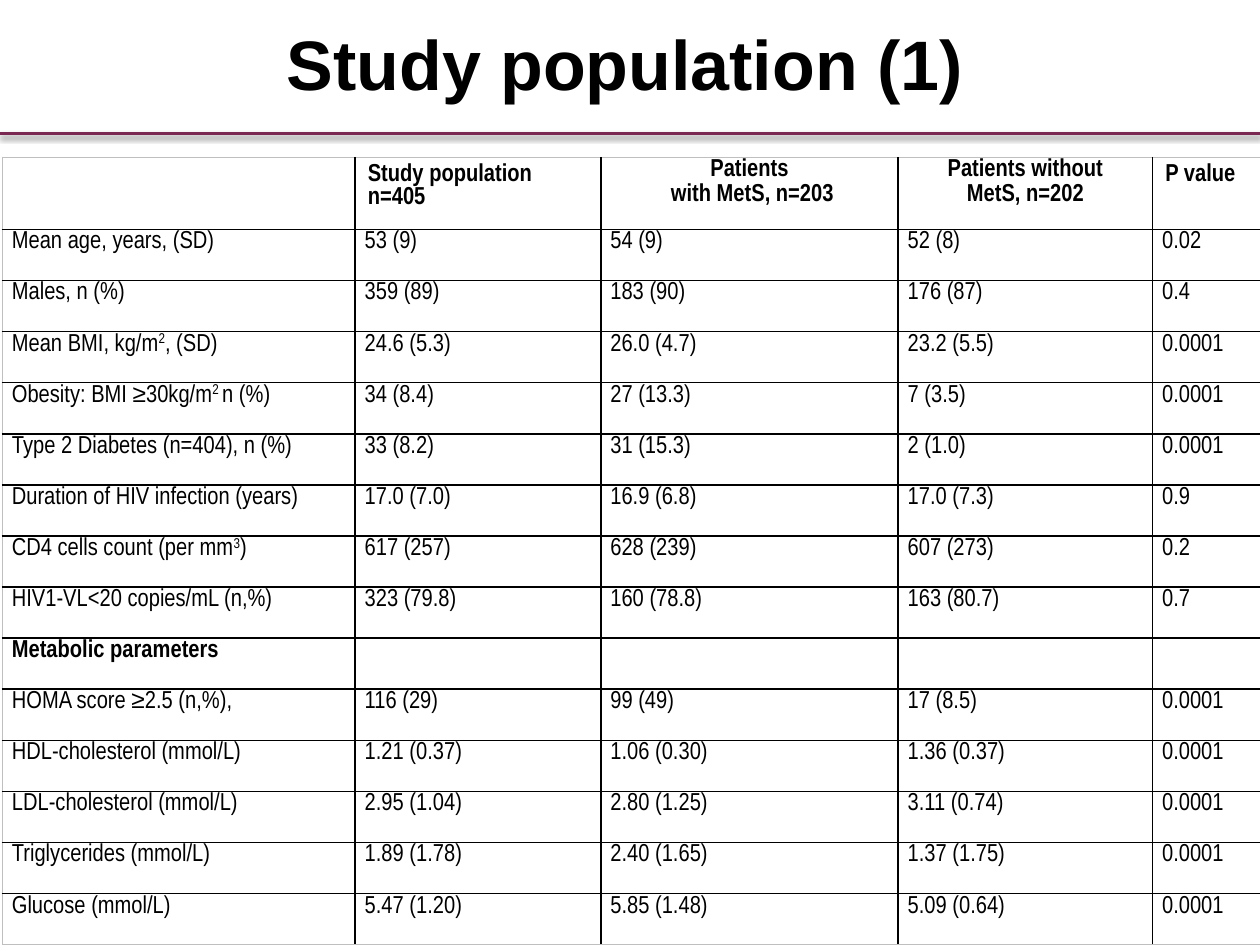
from lxml import etree
from pptx import Presentation
from pptx.dml.color import RGBColor
from pptx.enum import shapes, text
from pptx.oxml import ns
from pptx.util import Pt

BLACK = RGBColor(0x00, 0x00, 0x00)
WHITE = RGBColor(0xFF, 0xFF, 0xFF)
PLUM = RGBColor(0x7A, 0x28, 0x51)
EDGE_GREY = RGBColor(0xBF, 0xBF, 0xBF)

PAGE_WIDTH, PAGE_HEIGHT = 720, 540
COLUMN_WIDTHS = (201.6, 140.4, 169.9, 145.4, 62.6)
HEADER_HEIGHT, ROW_HEIGHT = 41.1, 29.2
LINE_SPACING = 1.07

# Superscripts stand between carets; a line break starts a new paragraph
HEADER = ("", "Study population\nn=405", "Patients\n with MetS, n=203",
          "Patients without\nMetS, n=202", "P value")
CENTRED_COLUMNS = (2, 3)
SECTION = "Metabolic parameters"
ROWS = (
    ("Mean age, years, (SD)", "53 (9)", "54 (9)", "52 (8)", "0.02"),
    ("Males, n (%)", "359 (89)", "183 (90)", "176 (87)", "0.4"),
    ("Mean BMI, kg/m^2^, (SD)", "24.6 (5.3)", "26.0 (4.7)", "23.2 (5.5)", "0.0001"),
    ("Obesity: BMI ≥30kg/m^2 ^n (%)", "34 (8.4)", "27 (13.3)", "7 (3.5)", "0.0001"),
    ("Type 2 Diabetes (n=404), n (%)", "33 (8.2)", "31 (15.3)", "2 (1.0)", "0.0001"),
    ("Duration of HIV infection (years)", "17.0 (7.0)", "16.9 (6.8)", "17.0 (7.3)", "0.9"),
    ("CD4 cells count (per mm^3^)", "617 (257)", "628 (239)", "607 (273)", "0.2"),
    ("HIV1-VL<20 copies/mL (n,%)", "323 (79.8)", "160 (78.8)", "163 (80.7)", "0.7"),
    (SECTION, "", "", "", ""),
    ("HOMA score ≥2.5 (n,%),", "116 (29)", "99 (49)", "17 (8.5)", "0.0001"),
    ("HDL-cholesterol (mmol/L)", "1.21 (0.37)", "1.06 (0.30)", "1.36 (0.37)", "0.0001"),
    ("LDL-cholesterol (mmol/L)", "2.95 (1.04)", "2.80 (1.25)", "3.11 (0.74)", "0.0001"),
    ("Triglycerides (mmol/L)", "1.89 (1.78)", "2.40 (1.65)", "1.37 (1.75)", "0.0001"),
    ("Glucose (mmol/L)", "5.47 (1.20)", "5.85 (1.48)", "5.09 (0.64)", "0.0001"),
)


def add_element(parent, tag, **attributes):
    element = etree.SubElement(parent, ns.qn(tag))
    for name, value in attributes.items():
        element.set(name, str(value))
    return element


def style_font(font, name, size, bold):
    font.name, font.size, font.bold = name, Pt(size), bold
    font.color.rgb = BLACK


def place_title(page, left, top, width, height):
    title = page.shapes.title
    title.left, title.top, title.width, title.height = map(Pt, (left, top, width, height))
    frame = title.text_frame
    frame.text = "Study population (1)"
    frame.word_wrap = False
    frame.auto_size = text.MSO_AUTO_SIZE.SHAPE_TO_FIT_TEXT
    frame.vertical_anchor = text.MSO_ANCHOR.MIDDLE
    para = frame.paragraphs[0]
    para.alignment = text.PP_ALIGN.CENTER
    style_font(para.font, "Arial", 40, True)


def place_rule(page, left, top, width):
    rule = page.shapes.add_connector(
        shapes.MSO_CONNECTOR.STRAIGHT, Pt(left), Pt(top), Pt(left + width), Pt(top))
    rule.line.color.rgb = PLUM
    rule.line.width = Pt(2)
    # Soft shadow straight below the rule
    effects = add_element(rule._element.spPr, "a:effectLst")
    shadow = add_element(effects, "a:outerShdw", blurRad=Pt(3.1), dist=Pt(1.6),
                         dir=90 * 60000, rotWithShape=0)
    color = add_element(shadow, "a:srgbClr", val=BLACK)
    add_element(color, "a:alpha", val=38000)


def set_borders(cell, colors):
    properties = cell._tc.get_or_add_tcPr()
    for side, color in zip("LRTB", colors):
        line = add_element(properties, f"a:ln{side}", w=Pt(1))
        fill = add_element(line, "a:solidFill")
        add_element(fill, "a:srgbClr", val=color)


def write_cell(cell, content, bold, compact, centred):
    if compact:
        cell.margin_left = cell.margin_right = Pt(5.4)
        cell.margin_top = cell.margin_bottom = 0
    frame = cell.text_frame
    for index, line in enumerate(content.split("\n")):
        para = frame.add_paragraph() if index else frame.paragraphs[0]
        style_font(para.font, "Arial Narrow", 14, bold)
        if compact:
            para.line_spacing = LINE_SPACING
        if centred:
            para.alignment = text.PP_ALIGN.CENTER
        for position, part in enumerate(line.split("^")):
            if not part:
                continue
            span = para.add_run()
            span.text = part
            if position % 2:
                span._r.get_or_add_rPr().set("baseline", "30000")


def place_table(page, left, top):
    rows = (HEADER,) + ROWS
    heights = [HEADER_HEIGHT] + [ROW_HEIGHT] * len(ROWS)
    table = page.shapes.add_table(
        len(rows), len(COLUMN_WIDTHS), Pt(left), Pt(top),
        Pt(sum(COLUMN_WIDTHS)), Pt(sum(heights))).table
    table.first_row = table.horz_banding = False
    for column, width in zip(table.columns, COLUMN_WIDTHS):
        column.width = Pt(width)

    last_row, last_column = len(rows) - 1, len(COLUMN_WIDTHS) - 1
    for r, (values, height) in enumerate(zip(rows, heights)):
        table.rows[r].height = Pt(height)
        for c, content in enumerate(values):
            cell = table.cell(r, c)
            # Grey outer frame, black inner grid
            outer = (c == 0, c == last_column, r == 0, r == last_row)
            set_borders(cell, [EDGE_GREY if edge else BLACK for edge in outer])
            cell.fill.solid()
            cell.fill.fore_color.rgb = WHITE
            centred = r == 0 and c in CENTRED_COLUMNS
            write_cell(cell, content, bold=r == 0 or content == SECTION,
                       compact=r > 0 or centred, centred=centred)


def main():
    deck = Presentation()
    deck.slide_width, deck.slide_height = Pt(PAGE_WIDTH), Pt(PAGE_HEIGHT)
    page = deck.slides.add_slide(deck.slide_layouts.get_by_name("Title Only"))
    place_title(page, 154.8, 7.9, 404.6, 55.4)
    place_rule(page, 0, 76.3, PAGE_WIDTH)
    place_table(page, 1.4, 90)
    deck.save("out.pptx")


if __name__ == "__main__":
    main()
